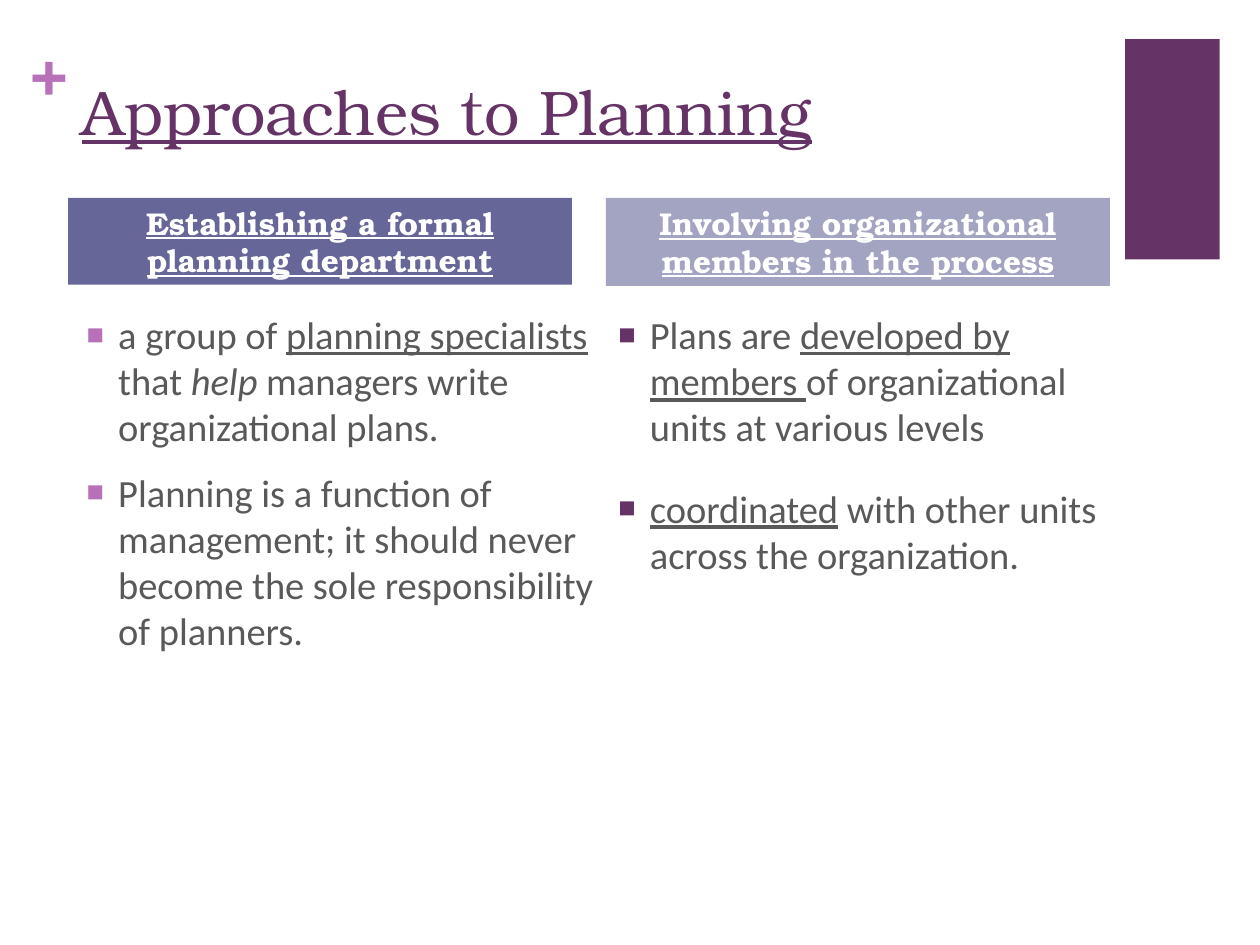
from lxml import etree
from pptx import Presentation
from pptx.dml.color import RGBColor
from pptx.enum.shapes import MSO_SHAPE
from pptx.enum.text import MSO_ANCHOR, PP_ALIGN
from pptx.oxml.ns import qn
from pptx.util import Inches, Pt

RECTANGLE = MSO_SHAPE.RECTANGLE
TOP, MIDDLE = MSO_ANCHOR.TOP, MSO_ANCHOR.MIDDLE
LEFT, CENTER = PP_ALIGN.LEFT, PP_ALIGN.CENTER

COLORS = {
    "plum": "663366",
    "orchid": "B870B8",
    "indigo": "666699",
    "lavender": "A3A3C2",
    "gray": "595959",
    "white": "FFFFFF",
}
SERIF, SANS = "TeX Gyre Bonum", "Calibri"

PLUS = {"name": SERIF, "size": Pt(36), "bold": True}
TITLE = {"name": SERIF, "size": Pt(36), "underline": True}
HEADING = {"name": SERIF, "size": Pt(18), "bold": True, "underline": True}
BODY = {"name": SANS, "size": Pt(22)}
UNDERLINE, ITALIC = {"underline": True}, {"italic": True}

DEPARTMENT_POINTS = [
    [("a group of ", {}), ("planning specialists ", UNDERLINE), ("that ", {}),
     ("help", ITALIC), (" managers write organizational plans.", {})],
    [("Planning is a function of management; it should never become "
      "the sole responsibility of planners.", {})],
]
MEMBER_POINTS = [
    [("Plans are ", {}), ("developed by members ", UNDERLINE),
     ("of organizational units at various levels", {})],
    [("coordinated", UNDERLINE),
     (" with other units across the organization.", {})],
]


def add_span(para, text, color, formats):
    span = para.add_run()
    span.text = text
    for name, value in formats.items():
        setattr(span.font, name, value)
    span.font.color.rgb = RGBColor.from_string(COLORS[color])


def add_block(page, place, fill):
    block = page.shapes.add_shape(RECTANGLE, *map(Inches, place))
    block.shadow.inherit = False
    block.fill.solid()
    block.fill.fore_color.rgb = RGBColor.from_string(COLORS[fill])
    block.line.fill.background()
    return block


def set_frame(box, anchor=TOP, wrap=True, side=0.1, edge=0.05):
    frame = box.text_frame
    settings = {
        "word_wrap": wrap,
        "vertical_anchor": anchor,
        "margin_left": Inches(side),
        "margin_right": Inches(side),
        "margin_top": Inches(edge),
        "margin_bottom": Inches(edge),
    }
    for name, value in settings.items():
        setattr(frame, name, value)
    return frame


def add_label(page, place, text, color, formats, **frame_settings):
    box = page.shapes.add_textbox(*map(Inches, place))
    para = set_frame(box, **frame_settings).paragraphs[0]
    para.alignment = LEFT
    add_span(para, text, color, formats)


def add_heading(page, place, text, fill):
    block = add_block(page, place, fill)
    para = set_frame(block, anchor=MIDDLE, edge=0).paragraphs[0]
    para.alignment = CENTER
    add_span(para, text, "white", HEADING)


def set_bullet(para, color, indent):
    """Give the paragraph a small square bullet with a hanging indent."""
    props = para._p.get_or_add_pPr()
    props.set("marL", str(Inches(indent)))
    props.set("indent", str(-Inches(0.25)))
    tint = etree.SubElement(props, qn("a:buClr"))
    etree.SubElement(tint, qn("a:srgbClr"), val=COLORS[color])
    etree.SubElement(props, qn("a:buSzPct"), val="75000")
    etree.SubElement(props, qn("a:buFont"), typeface="Arial")
    etree.SubElement(props, qn("a:buChar"), char="■")


def add_points(page, place, points, bullet_color, indent, gap):
    box = page.shapes.add_textbox(*map(Inches, place))
    frame = set_frame(box)
    for index, spans in enumerate(points):
        para = frame.add_paragraph() if index else frame.paragraphs[0]
        para.space_before = Pt(gap)
        set_bullet(para, bullet_color, indent)
        for text, formats in spans:
            add_span(para, text, "gray", {**BODY, **formats})


def main():
    deck = Presentation()
    deck.slide_width, deck.slide_height = Inches(10), Inches(7.5)
    page = deck.slides.add_slide(deck.slide_layouts[6])

    add_block(page, (8.93, 0.31, 0.75, 1.75), "plum")
    add_label(page, (0.24, 0.25, 0.29, 0.61), "+", "orchid", PLUS,
              wrap=False, side=0, edge=0)
    add_label(page, (0.55, 0.53, 8.26, 1.22), "Approaches to Planning",
              "plum", TITLE)
    add_points(page, (0.34, 2.42, 4.47, 4.61), DEPARTMENT_POINTS,
               "orchid", indent=0.5, gap=11)
    add_points(page, (4.81, 2.42, 4, 4.02), MEMBER_POINTS,
               "plum", indent=0.25, gap=20)
    add_heading(page, (0.54, 1.57, 4, 0.69),
                "Establishing a formal planning department", "indigo")
    add_heading(page, (4.81, 1.57, 4, 0.7),
                "Involving organizational members in the process", "lavender")

    deck.save("out.pptx")


if __name__ == "__main__":
    main()
